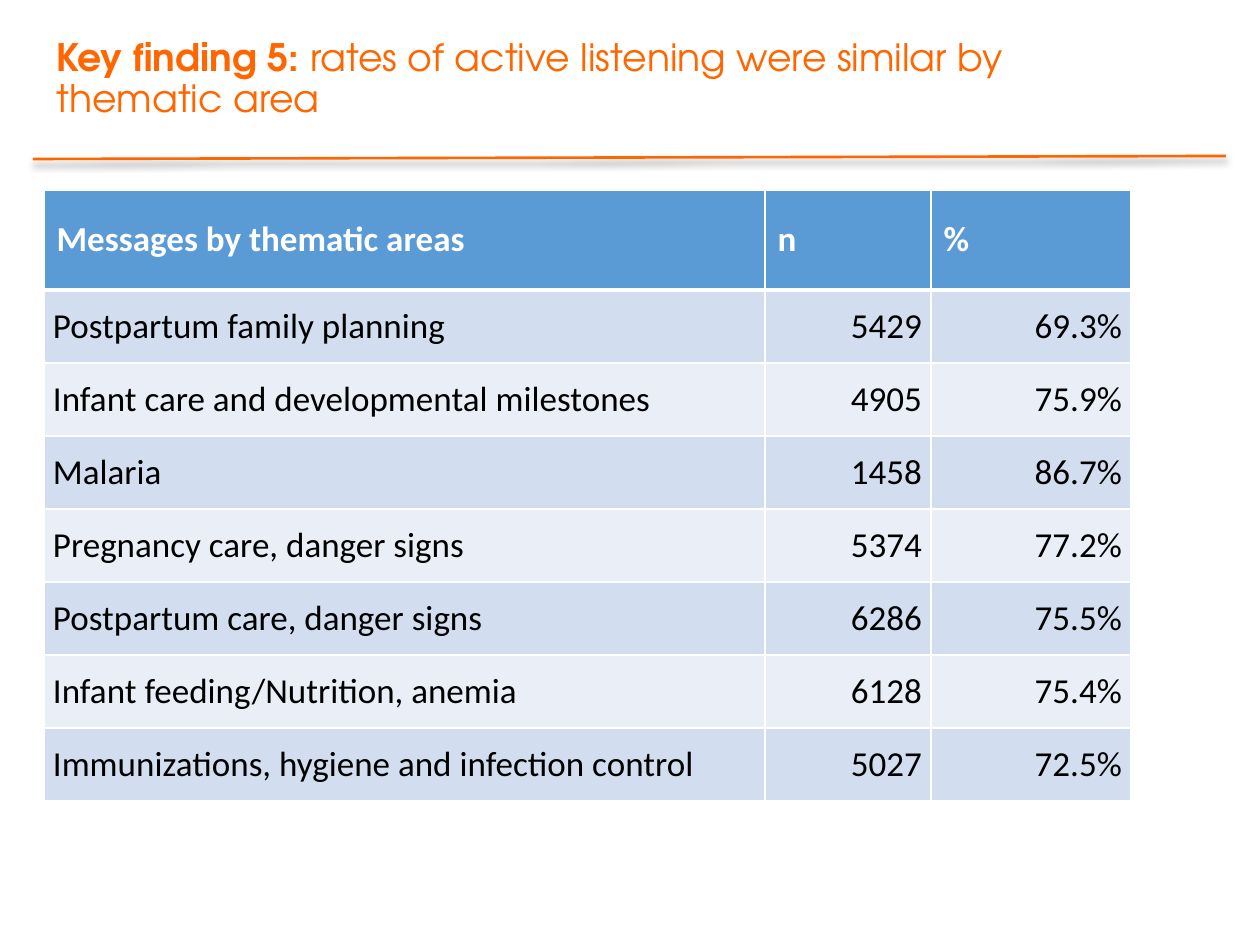
from dataclasses import dataclass

from lxml.etree import SubElement
from pptx import Presentation
from pptx.dml.color import RGBColor
from pptx.enum.text import MSO_ANCHOR, PP_ALIGN
from pptx.oxml.ns import qn
from pptx.util import Emu, Pt


@dataclass(frozen=True)
class Theme:
    accent: str = "FF6600"
    header: str = "5B9BD5"
    bands: tuple = ("D2DEEF", "EAEFF7")
    light: str = "FFFFFF"
    dark: str = "000000"
    title_font: str = "TeX Gyre Adventor"
    table_font: str = "Calibri"
    title_size: float = 21.6
    table_size: int = 20


THEME = Theme()
COLUMN_WIDTHS = (721, 166, 200)
HEADER_HEIGHT, ROW_HEIGHT = 100, 73
HEADINGS = ("Messages by thematic areas", "n", "%")
ROWS = (
    ("Postpartum family planning", "5429", "69.3%"),
    ("Infant care and developmental milestones", "4905", "75.9%"),
    ("Malaria", "1458", "86.7%"),
    ("Pregnancy care, danger signs", "5374", "77.2%"),
    ("Postpartum care, danger signs", "6286", "75.5%"),
    ("Infant feeding/Nutrition, anemia", "6128", "75.4%"),
    ("Immunizations, hygiene and infection control", "5027", "72.5%"),
)


def px(n):
    """Convert pixels, 126 to the inch, to EMU."""
    return Emu(round(n * 914400 / 126))


def rgb(color):
    return RGBColor.from_string(color)


def add_title(slide, lead, rest):
    tf = slide.shapes.add_textbox(px(44), px(29), px(1086), px(102)).text_frame
    tf.word_wrap = True
    tf.vertical_anchor = MSO_ANCHOR.MIDDLE
    p = tf.paragraphs[0]
    p.line_spacing = 0.9
    p.font.name = THEME.title_font
    p.font.size = Pt(THEME.title_size)
    p.font.color.rgb = rgb(THEME.accent)
    for text, bold in ((lead, True), (rest, False)):
        r = p.add_run()
        r.text = text
        r.font.bold = bold


def add_rule(slide, x1, y1, x2, y2):
    """Draw the accent line with a soft shadow below it."""
    line = slide.shapes.add_connector(1, px(x1), px(y1), px(x2), px(y2))
    line.line.color.rgb = rgb(THEME.accent)
    line.line.width = Pt(1.5)
    effects = SubElement(line._element.spPr, qn("a:effectLst"))
    shadow = SubElement(effects, qn("a:outerShdw"), blurRad=str(Pt(4)),
                        dist=str(Pt(3)), dir="5400000", rotWithShape="0")
    color = SubElement(shadow, qn("a:srgbClr"), val=THEME.dark)
    SubElement(color, qn("a:alpha"), val="40000")


def set_borders(cell, top=1, bottom=1):
    """Give the cell light borders; must run before the fill is set."""
    tc_pr = cell._tc.get_or_add_tcPr()
    for side, width in (("L", 1), ("R", 1), ("T", top), ("B", bottom)):
        ln = SubElement(tc_pr, qn(f"a:ln{side}"), w=str(Pt(width)))
        fill = SubElement(ln, qn("a:solidFill"))
        SubElement(fill, qn("a:srgbClr"), val=THEME.light)


def style_cell(cell, text, fill, color, bold=False, align=PP_ALIGN.LEFT):
    cell.fill.solid()
    cell.fill.fore_color.rgb = rgb(fill)
    cell.vertical_anchor = MSO_ANCHOR.MIDDLE
    cell.text = text
    p = cell.text_frame.paragraphs[0]
    p.alignment = align
    p.font.name = THEME.table_font
    p.font.size = Pt(THEME.table_size)
    p.font.bold = bold
    p.font.color.rgb = rgb(color)


def add_table(slide, left, top):
    height = HEADER_HEIGHT + ROW_HEIGHT * len(ROWS)
    table = slide.shapes.add_table(
        len(ROWS) + 1, len(HEADINGS), px(left), px(top),
        px(sum(COLUMN_WIDTHS)), px(height)).table
    for column, width in zip(table.columns, COLUMN_WIDTHS):
        column.width = px(width)
    for i, row in enumerate(table.rows):
        row.height = px(ROW_HEIGHT if i else HEADER_HEIGHT)

    for cell, text in zip(table.rows[0].cells, HEADINGS):
        set_borders(cell, bottom=3)
        style_cell(cell, text, THEME.header, THEME.light, bold=True)
    for i, values in enumerate(ROWS):
        for j, text in enumerate(values):
            cell = table.cell(i + 1, j)
            set_borders(cell, top=1 if i else 3)
            cell.margin_left = cell.margin_right = px(9)
            cell.margin_top = cell.margin_bottom = 0
            style_cell(cell, text, THEME.bands[i % 2], THEME.dark,
                       align=PP_ALIGN.RIGHT if j else PP_ALIGN.LEFT)


def main():
    prs = Presentation()
    prs.slide_width, prs.slide_height = px(1260), px(945)
    slide = prs.slides.add_slide(prs.slide_layouts[6])
    add_title(slide, "Key finding 5: ",
              "rates of active listening were similar by thematic area")
    add_rule(slide, 33, 159, 1226, 156)
    add_table(slide, 44, 190)
    prs.save("out.pptx")


if __name__ == "__main__":
    main()
